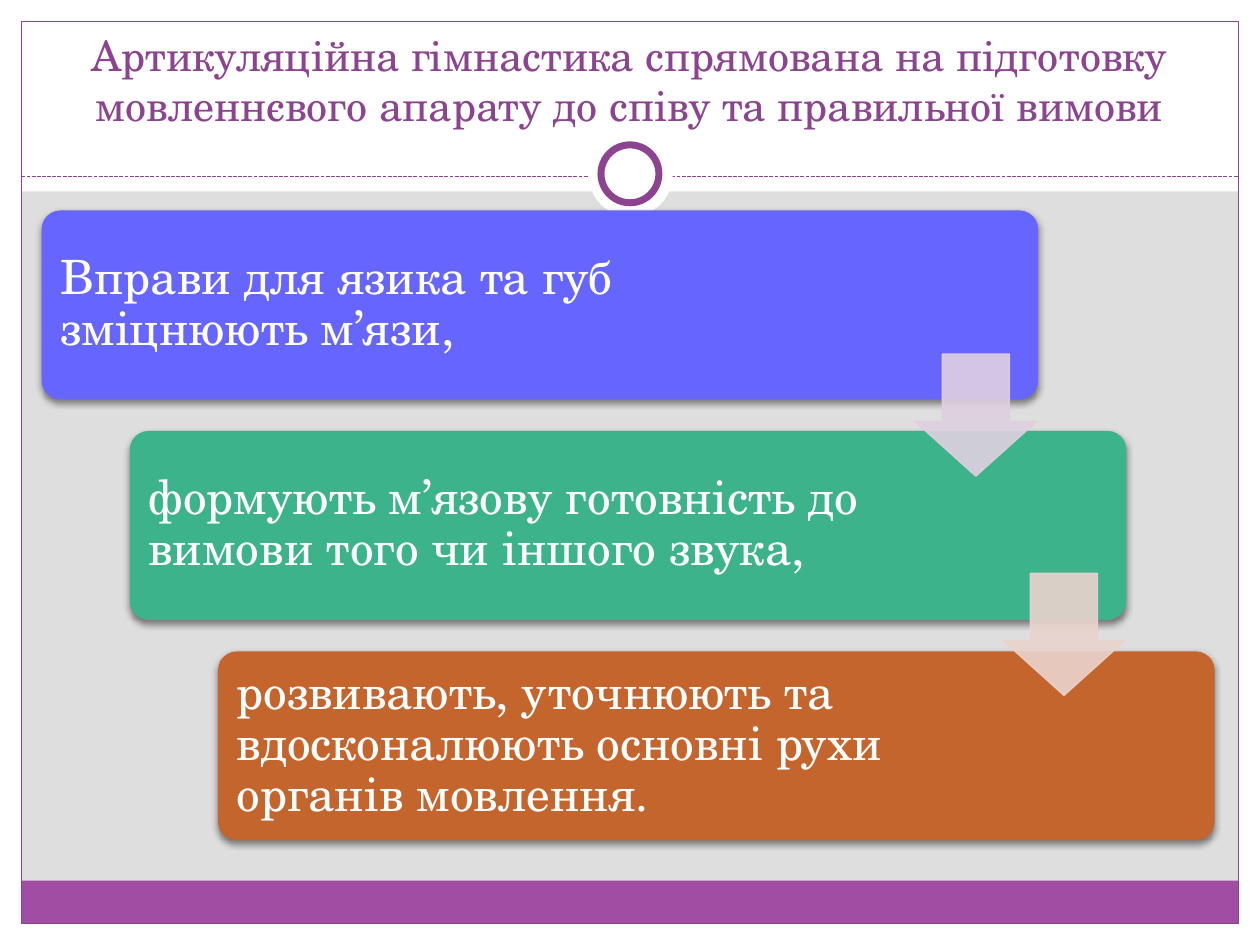
"""Build a slide on the aims of articulation exercises."""
from lxml.etree import SubElement
from pptx import Presentation
from pptx.dml.color import RGBColor
from pptx.enum.dml import MSO_LINE
from pptx.enum.shapes import MSO_CONNECTOR, MSO_SHAPE
from pptx.enum.text import MSO_ANCHOR, PP_ALIGN
from pptx.oxml.ns import qn
from pptx.util import Inches, Pt

FONT = "TeX Gyre Schola"
HUE = {
    "back": "DEDEDE", "white": "FFFFFF", "band": "A04DA3", "plum": "8D4490",
    "blue": "6666FF", "green": "3DB38C", "rust": "C4652D",
    "lilac": "DFD0E0", "rose": "EAD3CD", "black": "000000",
}


def draw(kind, box, fill=None, line=None, width=0.75):
    shape = slide.shapes.add_shape(kind, *map(Inches, box))
    shape.shadow.inherit = False
    if fill:
        shape.fill.solid()
        shape.fill.fore_color.rgb = RGBColor.from_string(HUE[fill])
    else:
        shape.fill.background()
    if line:
        shape.line.color.rgb = RGBColor.from_string(HUE[line])
        shape.line.width = Pt(width)
    else:
        shape.line.fill.background()
    return shape


def write(text, box, size, hue, anchor, inset):
    frame = slide.shapes.add_textbox(*map(Inches, box)).text_frame
    frame.word_wrap = True
    frame.vertical_anchor = anchor
    frame.margin_left = frame.margin_right = Inches(inset[0])
    frame.margin_top = frame.margin_bottom = Inches(inset[1])
    par = frame.paragraphs[0]
    par.text = text
    par.font.name = FONT
    par.font.size = Pt(size)
    par.font.color.rgb = RGBColor.from_string(HUE[hue])
    return par


deck = Presentation()
deck.slide_width, deck.slide_height = Inches(10), Inches(7.5)
slide = deck.slides.add_slide(deck.slide_layouts[6])
slide.background.fill.solid()
slide.background.fill.fore_color.rgb = RGBColor.from_string(HUE["back"])

edges = [(0, 7.33, 10, 0.17), (0, 0, 10, 1.52), (0, 0, 0.17, 7.5), (9.83, 0, 0.17, 7.5)]
for edge in edges:
    draw(MSO_SHAPE.RECTANGLE, edge, "white")
draw(MSO_SHAPE.RECTANGLE, (0.17, 6.99, 9.66, 0.34), "band")
draw(MSO_SHAPE.RECTANGLE, (0.17, 0.17, 9.66, 7.16), line="plum")

rule = slide.shapes.add_connector(
    MSO_CONNECTOR.STRAIGHT, Inches(0.17), Inches(1.4), Inches(9.83), Inches(1.4))
rule.line.color.rgb = RGBColor.from_string(HUE["plum"])
rule.line.width = Pt(0.75)
rule.line.dash_style = MSO_LINE.SQUARE_DOT
SubElement(rule._element.spPr, qn("a:effectLst"))

draw(MSO_SHAPE.OVAL, (4.67, 1.05, 0.67, 0.67), "white")
draw(MSO_SHAPE.OVAL, (4.77, 1.15, 0.46, 0.46), "white", "plum", 4)

title = write(
    "Артикуляційна гімнастика спрямована на підготовку мовленнєвого апарату "
    "до співу та правильної вимови",
    (0.33, 0.25, 9.33, 0.83), 24, "plum", MSO_ANCHOR.BOTTOM, (0.1, 0.05))
title.alignment = PP_ALIGN.CENTER

steps = [
    ("Вправи для язика та губ зміцнюють м’язи,", "blue", 6.29),
    ("формують м’язову готовність до вимови того чи іншого звука,", "green", 6.14),
    ("розвивають, уточнюють та вдосконалюють основні рухи органів мовлення.", "rust", 6.14),
]
for row, (text, hue, wide) in enumerate(steps):
    left, top = 0.33 + 0.7 * row, 1.67 + 1.75 * row
    card = draw(MSO_SHAPE.ROUNDED_RECTANGLE, (left, top, 7.91, 1.5), hue)
    card.adjustments[0] = 0.1
    glow = SubElement(
        card._element.spPr.find(qn("a:effectLst")), qn("a:outerShdw"),
        blurRad=str(Pt(4)), dist=str(Pt(2)), dir="5400000", rotWithShape="0")
    tint = SubElement(glow, qn("a:srgbClr"), val=HUE["black"])
    SubElement(tint, qn("a:alpha"), val="45000")
    par = write(text, (left + 0.04, top + 0.04, wide, 1.41), 27, "white",
                MSO_ANCHOR.MIDDLE, (0.11, 0.11))
    par.line_spacing = 0.9

for row, hue in enumerate(["lilac", "rose"]):
    box = (7.26 + 0.7 * row, 2.81 + 1.74 * row, 0.97, 0.97)
    arrow = draw(MSO_SHAPE.DOWN_ARROW, box, hue, hue)
    arrow.adjustments[0], arrow.adjustments[1] = 0.55, 0.45
    for tint in arrow._element.spPr.iter(qn("a:srgbClr")):
        SubElement(tint, qn("a:alpha"), val="90000")

deck.save("out.pptx")
